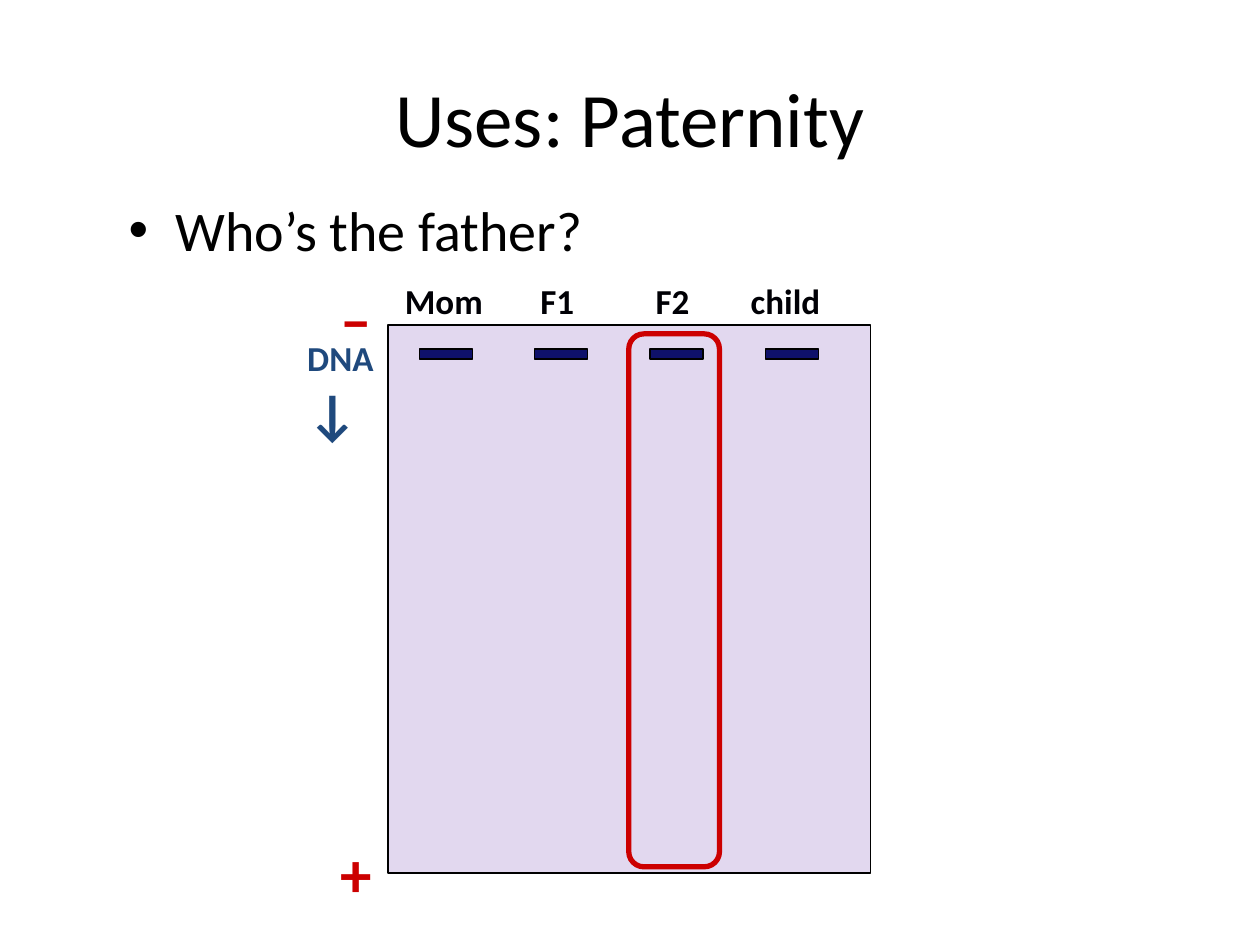
"""Build the paternity slide: a four-lane gel with one lane circled."""
from pptx import Presentation
from pptx.dml.color import RGBColor
from pptx.enum.shapes import MSO_SHAPE
from pptx.enum.text import MSO_ANCHOR, PP_ALIGN
from pptx.util import Inches, Pt

BLACK = RGBColor(0, 0, 0)
INK = RGBColor(0, 0, 5)
RED = RGBColor(0xCC, 0, 0)
BLUE = RGBColor(0x1F, 0x49, 0x7D)
NAVY = RGBColor(0x0F, 0x11, 0x6A)
LILAC = RGBColor(0xE2, 0xD8, 0xEF)


def write(item, box, lines, color, bold=True, wrap=True):
    item.left, item.top, item.width, item.height = map(Inches, box)
    frame = item.text_frame
    frame.word_wrap = wrap
    for row, (text, size) in enumerate(lines):
        para = frame.add_paragraph() if row else frame.paragraphs[0]
        run = para.add_run()
        run.text = text
        font = run.font
        font.name, font.size, font.bold = "Calibri", Pt(size), bold
        font.color.rgb = color
    return frame


def draw(kind, box, fill, line, width):
    item = slide.shapes.add_shape(kind, *map(Inches, box))
    item.shadow.inherit = False
    if fill is None:
        item.fill.background()
    else:
        item.fill.solid()
        item.fill.fore_color.rgb = fill
    item.line.color.rgb = line
    item.line.width = Pt(width)
    return item


deck = Presentation()
deck.slide_width, deck.slide_height = Inches(10), Inches(7.5)
slide = deck.slides.add_slide(deck.slide_layouts[1])
title, body = slide.placeholders

frame = write(title, (0.5, 0.3, 9, 1.25), [("Uses: Paternity", 44)], BLACK, False)
frame.vertical_anchor = MSO_ANCHOR.MIDDLE
frame.paragraphs[0].alignment = PP_ALIGN.CENTER
write(body, (0.92, 1.5, 8.5, 1), [("Who’s the father?", 32)], BLACK, False)

left, top, wide, high = 3.08, 2.58, 3.83, 4.35
draw(MSO_SHAPE.RECTANGLE, (left, top, wide, high), LILAC, BLACK, 0.75)

first, pitch, band = 3.54, 0.915, 0.42
labels = [
    ((2.6, 2.17, 0.48, 0.7), [("–", 36)], RED, True),
    ((2.6, 6.57, 0.48, 0.7), [("+", 36)], RED, True),
    ((2.34, 2.62, 0.8, 0.97), [("DNA", 20), ("↓", 32)], BLUE, False),
]
lanes = [("Mom", 0.85), ("F1", 0.53), ("F2", 0.53), ("child", 0.85)]
for col, (name, width) in enumerate(lanes):
    mid = first + col * pitch
    draw(MSO_SHAPE.RECTANGLE, (mid - band / 2, 2.77, band, 0.08), NAVY, BLACK, 0.75)
    labels.append(((mid - width / 2, 2.17, width, 0.43), [(name, 20)], INK, False))

for box, lines, color, wrap in labels:
    item = slide.shapes.add_textbox(0, 0, 0, 0)
    frame = write(item, box, lines, color, wrap=wrap)
    frame.vertical_anchor = MSO_ANCHOR.MIDDLE

ring = draw(MSO_SHAPE.ROUNDED_RECTANGLE, (4.99, 2.65, 0.72, 4.23), None, RED, 3)
ring.adjustments[0] = 0.167

deck.save("out.pptx")
